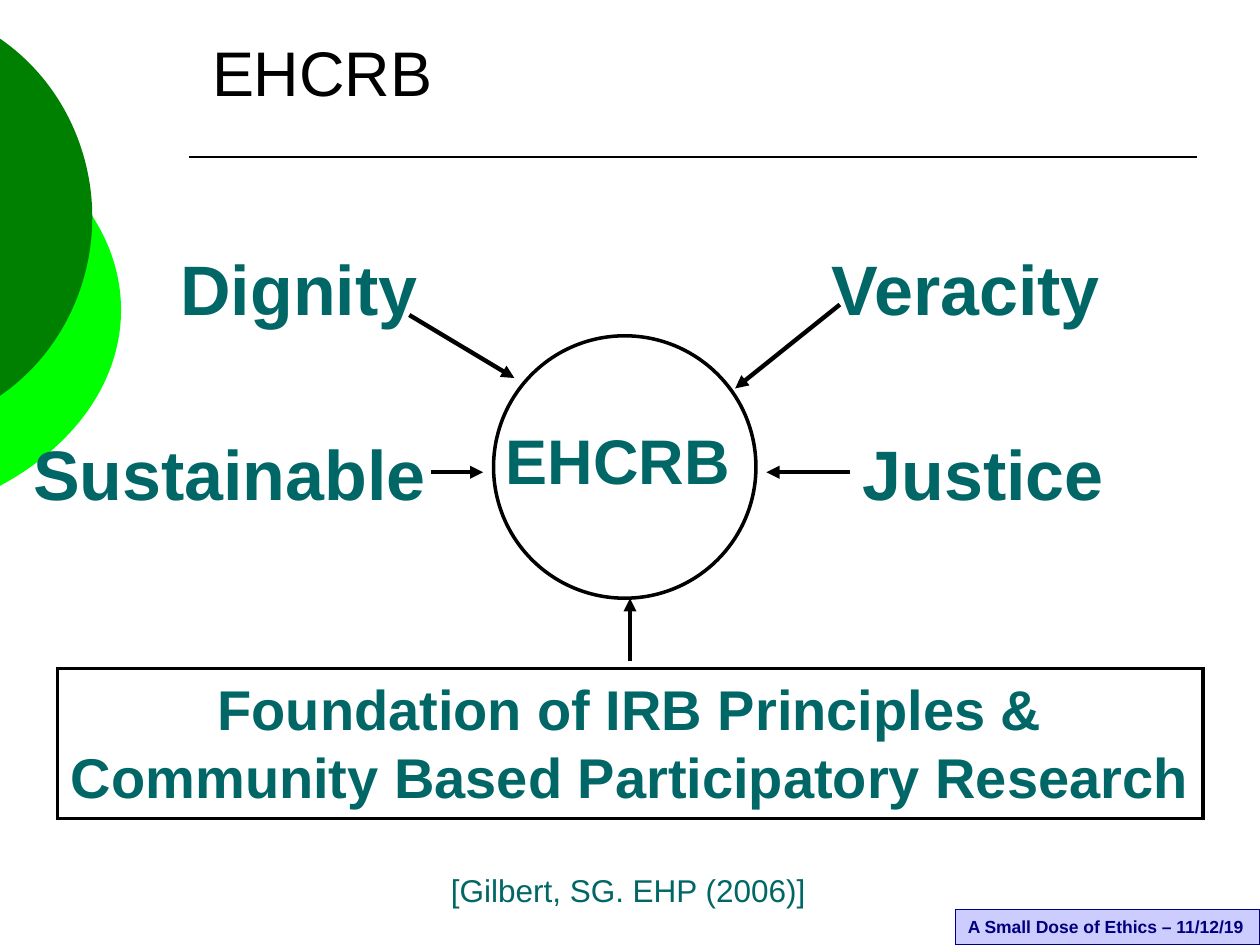
from lxml import etree
from pptx import Presentation, util as u
from pptx.dml.color import RGBColor
from pptx.enum import shapes as sh, text as tx
from pptx.oxml.ns import qn

TEAL, BLACK, NAVY = "006666", "000000", "00007D"
DISCS = [
    ("00FF00", (-8.99, 1.91, 11.43, 8.69),
     [(-0.03, 2.69), (1.52, 3.51), (2.44, 4.83), (2.44, 6.25)]),
    ("008000", (-6.73, 0, 8.59, 8.76),
     [(-0.03, 0.76), (1.17, 1.57), (1.86, 2.95), (1.86, 4.38)]),
]
RULE = (3.81, 3.17, 24.13, 3.17)
TITLE = ("EHCRB", (4.02, 0.55, 20.96, 1.78))
FOOTER = ("A Small Dose of Ethics – 11/12/19", (19.26, 18.34, 6.14, 0.71))
CIRCLE = (9.95, 6.77, 5.29, 5.29)
BASE = (["Foundation of IRB Principles &",
         "Community Based Participatory Research"],
        (1.16, 13.48, 23.09, 3.02))
LABELS = [
    ("[Gilbert, SG. EHP (2006)]", (8.84, 17.43, 7.67, 1.02), 18, False),
    ("EHCRB", (9.95, 8.38, 5.03, 1.78), 36, True),
    ("Dignity", (3.39, 4.83, 5.28, 1.96), 40, True),
    ("Veracity", (16.51, 4.83, 5.99, 1.96), 40, True),
    ("Justice", (17.14, 8.56, 5.38, 1.96), 40, True),
    ("Sustainable", (0.42, 8.56, 8.43, 1.96), 40, True),
]
ARROWS = [
    (8.25, 6.35, 10.37, 7.62),
    (16.93, 6.14, 14.82, 7.83),
    (17.14, 9.52, 15.45, 9.52),
    (8.68, 9.52, 9.74, 9.52),
    (12.7, 13.33, 12.7, 12.06),
]


def cm(nums):
    return [u.Cm(n) for n in nums]


def rgb(code):
    return RGBColor.from_string(code)


def paint(shape, fill=None, line=None, width=1):
    shape.shadow.inherit = False
    if fill:
        shape.fill.solid()
        shape.fill.fore_color.rgb = rgb(fill)
    else:
        shape.fill.background()
    if line:
        shape.line.color.rgb = rgb(line)
        shape.line.width = u.Pt(width)
        etree.SubElement(shape.line._get_or_add_ln(), qn("a:miter"), lim="800000")
    else:
        shape.line.fill.background()


def write(shape, lines, size=40, color=TEAL, bold=False, wrap=False,
          align=tx.PP_ALIGN.LEFT, anchor=tx.MSO_ANCHOR.TOP):
    frame = shape.text_frame
    frame.word_wrap = wrap
    frame.auto_size = tx.MSO_AUTO_SIZE.NONE
    frame.vertical_anchor = anchor
    frame.text = "\n".join(lines)
    for para in frame.paragraphs:
        para.alignment = align
        font = para.runs[0].font
        font.name, font.size, font.bold = "Arial", u.Pt(size), bold
        font.color.rgb = rgb(color)


def disc(slide, fill, box, curve):
    mid = curve[-1][1]
    low = [(x, 2 * mid - y) for x, y in reversed(curve[:-1])]
    pen = slide.shapes.build_freeform(*cm(curve[0]))
    pen.add_line_segments([cm(curve[-1]), cm(low[-1])], close=True)
    shape = pen.convert_to_shape()
    paint(shape, fill)
    left, top, wide, high = cm(box)
    shape.left, shape.top, shape.width, shape.height = left, top, wide, high
    track = next(shape._element.iter(qn("a:path")))
    for part in list(track):
        track.remove(part)
    track.set("w", str(wide))
    track.set("h", str(high))
    steps = [("moveTo", curve[:1]), ("cubicBezTo", curve[1:]),
             ("cubicBezTo", low), ("close", [])]
    for name, spots in steps:
        step = etree.SubElement(track, qn("a:" + name))
        for x, y in spots:
            etree.SubElement(step, qn("a:pt"),
                             x=str(u.Cm(x) - left), y=str(u.Cm(y) - top))


def draw(slide, ends, width, head=False):
    line = slide.shapes.add_connector(sh.MSO_CONNECTOR.STRAIGHT, *cm(ends))
    line.line.color.rgb = rgb(BLACK)
    line.line.width = u.Pt(width)
    if head:
        etree.SubElement(line.line._get_or_add_ln(), qn("a:tailEnd"), type="triangle")
    etree.SubElement(line._element.spPr, qn("a:effectLst"))


def block(slide, kind, box, **style):
    shape = slide.shapes.add_shape(kind, *cm(box))
    paint(shape, **style)
    return shape


def main():
    deck = Presentation()
    deck.slide_width, deck.slide_height = cm((25.4, 19.05))
    slide = deck.slides.add_slide(deck.slide_layouts[5])
    kinds = sh.MSO_SHAPE
    for fill, box, curve in DISCS:
        disc(slide, fill, box, curve)
    draw(slide, RULE, 1)

    words, box = FOOTER
    foot = block(slide, kinds.RECTANGLE, box, fill="CCCCFF", line=NAVY, width=0.75)
    write(foot, [words], size=10, color=NAVY, bold=True, wrap=True)

    words, box = TITLE
    title = slide.shapes.title
    title.left, title.top, title.width, title.height = cm(box)
    write(title, [words], size=36, color=BLACK, wrap=True,
          anchor=tx.MSO_ANCHOR.BOTTOM)

    block(slide, kinds.OVAL, CIRCLE, line=BLACK, width=2)
    for words, box, size, bold in LABELS:
        write(slide.shapes.add_textbox(*cm(box)), [words], size=size, bold=bold)

    lines, box = BASE
    base = block(slide, kinds.RECTANGLE, box, line=BLACK, width=2)
    write(base, lines, size=32, bold=True, align=tx.PP_ALIGN.CENTER)
    for ends in ARROWS:
        draw(slide, ends, 2.5, head=True)
    deck.save("out.pptx")


if __name__ == "__main__":
    main()
